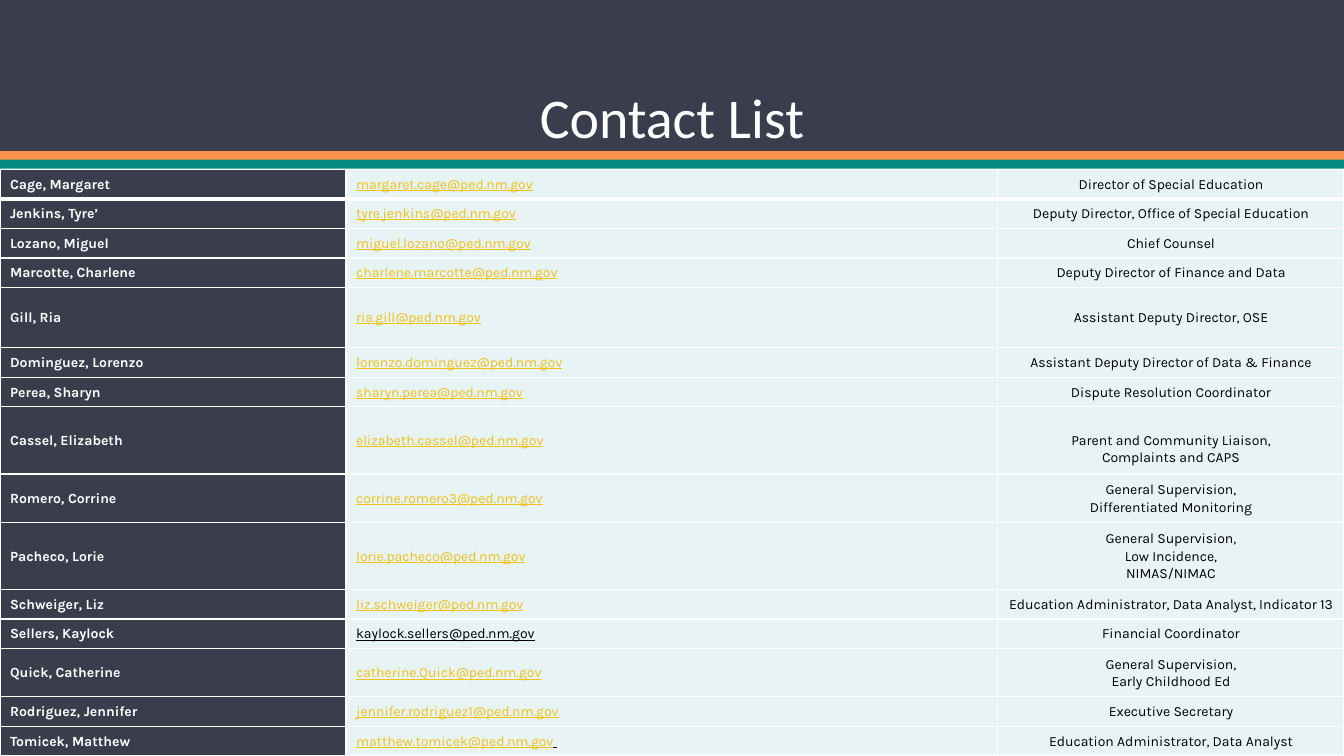
from lxml.etree import SubElement
from pptx import Presentation
from pptx.dml.color import RGBColor
from pptx.enum.shapes import MSO_SHAPE
from pptx.enum.text import MSO_ANCHOR, PP_ALIGN
from pptx.oxml.ns import qn
from pptx.util import Inches, Pt

WIDE, HIGH = 13.33, 7.5
DARK, ORANGE, TEAL, PALE = "3A3D4B", "FF914D", "048A81", "E7F3F4"
WHITE, BLACK, GOLD = "FFFFFF", "000000", "EFC119"
MAIL = "@ped.nm.gov"
PAD = 0.57  # cell padding, in text lines

# name, mailbox, role, row height in text lines
PEOPLE = [
    ("Cage, Margaret", "margaret.cage", "Director of Special Education", 1),
    ("Jenkins, Tyre’", "tyre.jenkins", "Deputy Director, Office of Special Education", 1),
    ("Lozano, Miguel", "miguel.lozano", "Chief Counsel", 1),
    ("Marcotte, Charlene", "charlene.marcotte", "Deputy Director of Finance and Data", 1),
    ("Gill, Ria", "ria.gill", "Assistant Deputy Director, OSE", 2.64),
    ("Dominguez, Lorenzo", "lorenzo.dominguez", "Assistant Deputy Director of Data & Finance", 1),
    ("Perea, Sharyn", "sharyn.perea", "Dispute Resolution Coordinator", 1),
    ("Cassel, Elizabeth", "elizabeth.cassel", "Parent and Community Liaison,\nComplaints and CAPS", 3),
    ("Romero, Corrine", "corrine.romero3", "General Supervision,\nDifferentiated Monitoring", 2),
    ("Pacheco, Lorie", "lorie.pacheco", "General Supervision,\nLow Incidence,\nNIMAS/NIMAC", 3),
    ("Schweiger, Liz", "liz.schweiger", "Education Administrator, Data Analyst, Indicator 13", 1),
    ("Sellers, Kaylock", "kaylock.sellers", "Financial Coordinator", 1),
    ("Quick, Catherine", "catherine.Quick", "General Supervision,\nEarly Childhood Ed", 2),
    ("Rodriguez, Jennifer", "jennifer.rodriguez1", "Executive Secretary", 1),
    ("Tomicek, Matthew", "matthew.tomicek", "Education Administrator, Data Analyst", 1),
]


def color(code):
    return RGBColor.from_string(code)


class Deck:
    """Holds the style and the current slide; places are percent of the slide."""

    head, body = ("Calibri", 40), ("Karla", 10)

    def __init__(self):
        self.show = Presentation()
        self.show.slide_width, self.show.slide_height = Inches(WIDE), Inches(HIGH)
        self.slide = self.show.slides.add_slide(self.show.slide_layouts[6])

    def place(self, left, top, width, height):
        return [Inches(part * side / 100) for part, side in
                zip((left, top, width, height), (WIDE, HIGH) * 2)]

    def band(self, top, height, fill):
        bar = self.slide.shapes.add_shape(MSO_SHAPE.RECTANGLE, *self.place(0, top, 100, height))
        bar.shadow.inherit = False
        bar.fill.solid()
        bar.fill.fore_color.rgb = color(fill)
        bar.line.fill.background()

    def letter(self, para, text, style, ink, bold=False, under=False):
        """Add text as runs, with a line break at each newline."""
        for index, line in enumerate(text.split("\n")):
            if index:
                para.add_line_break()
            run = para.add_run()
            run.text = line
            font = run.font
            font.name, font.size = style[0], Pt(style[1])
            font.bold, font.underline = bold, under
            font.color.rgb = color(ink)

    def title(self, text, *spot):
        frame = self.slide.shapes.add_textbox(*self.place(*spot)).text_frame
        frame.word_wrap = True
        para = frame.paragraphs[0]
        para.alignment = PP_ALIGN.CENTER
        self.letter(para, text, self.head, WHITE)

    def grid(self, spot, cols, lines):
        """Add a plain table whose columns and rows share its size by weight."""
        table = self.slide.shapes.add_table(len(lines), len(cols), *self.place(*spot)).table
        table.first_row = table.horz_banding = False
        for col, share in zip(table.columns, cols):
            col.width = Inches(WIDE * share / 100)
        unit = HIGH * spot[3] / 100 / sum(count + PAD for count in lines)
        for row, count in zip(table.rows, lines):
            row.height = Inches(unit * (count + PAD))
        return table

    def cell(self, cell, fill, low=1, align=PP_ALIGN.LEFT):
        """Style a cell with white borders and return its paragraph."""
        props = cell._tc.get_or_add_tcPr()
        for side, width in (("L", 1), ("R", 1), ("T", 1), ("B", low)):
            edge = SubElement(props, qn("a:ln" + side), w=str(Pt(width)))
            paint = SubElement(edge, qn("a:solidFill"))
            SubElement(paint, qn("a:srgbClr"), val=WHITE)
        cell.fill.solid()
        cell.fill.fore_color.rgb = color(fill)
        cell.vertical_anchor = MSO_ANCHOR.MIDDLE
        para = cell.text_frame.paragraphs[0]
        para.alignment, para.line_spacing = align, 1.07
        return para


def main():
    deck = Deck()
    deck.band(0, 20, DARK)
    deck.band(20, 1.2, ORANGE)
    deck.band(21.1, 1.2, TEAL)

    table = deck.grid((0, 22.4, 100, 77.6), (25.75, 48.5, 25.75),
                      [person[3] for person in PEOPLE])
    for index, (name, box, role, _) in enumerate(PEOPLE):
        low = 1 if index else 3
        who, mail, job = (table.cell(index, col) for col in range(3))
        deck.letter(deck.cell(who, DARK, low), name, deck.body, WHITE, bold=True)
        ink = BLACK if box == "kaylock.sellers" else GOLD
        para = deck.cell(mail, PALE, low)
        deck.letter(para, box + MAIL, deck.body, ink, under=True)
        if box == "matthew.tomicek":
            deck.letter(para, " ", deck.body, BLACK, under=True)
        deck.letter(deck.cell(job, PALE, low, PP_ALIGN.CENTER), role, deck.body, BLACK)
        if box == "elizabeth.cassel":
            job.margin_top = Inches(0.22)

    deck.title("Contact List", 19.9, 10.27, 60.2, 10.27)
    deck.show.save("out.pptx")


if __name__ == "__main__":
    main()
